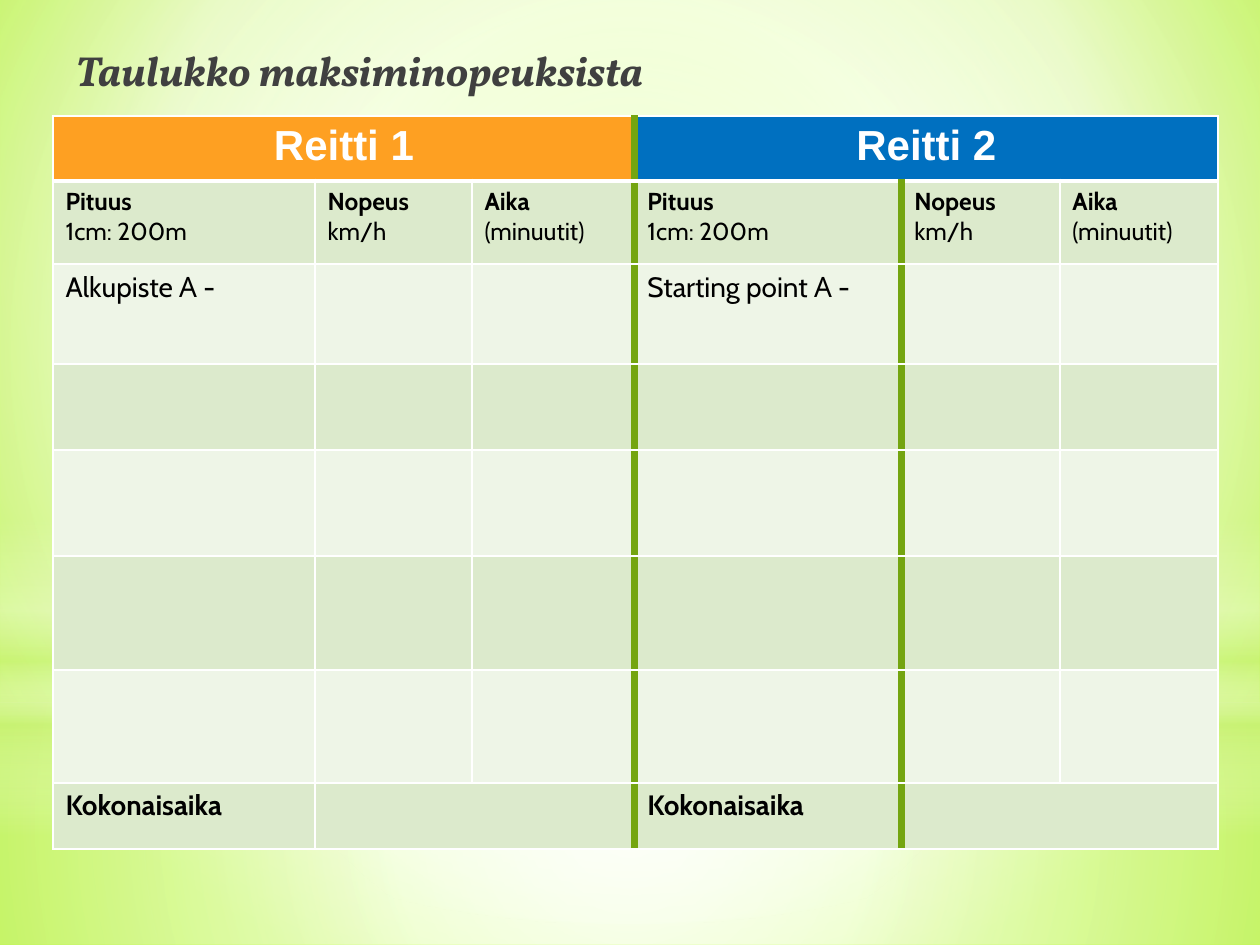
import pptx
import pptx.dml.color
import pptx.enum.shapes
import pptx.enum.text
import pptx.oxml
import pptx.oxml.ns
import pptx.util

PX = 914400 // 126
WHITE, LIME, GREEN = "FFFFFF", "CAF278", "74A510"
BANDS = ("DCEACC", "EEF5E7")
COLUMNS = (262, 157, 163, 267, 158, 158)
ROWS = (65, 83, 100, 86, 106, 114, 113, 66)
ROUTES = (("Reitti 1", "FEA022", "Alkupiste Α -"), ("Reitti 2", "0070C0", "Starting point Α -"))
HEADINGS = (("Pituus", "1cm: 200m"), ("Nopeus", "km/h"), ("Aika", "(minuutit)"))
CENTRE = (50, 50, 50, 50)
RECTANGLE = pptx.enum.shapes.MSO_SHAPE.RECTANGLE
OVAL = pptx.enum.shapes.MSO_SHAPE.OVAL
GLOWS = (
    (RECTANGLE, (0, 703, 1260, 242), ((0, WHITE, 91), (37, WHITE, 76), (100, LIME, 79)), CENTRE),
    (RECTANGLE, (0, 0, 1260, 703), ((0, WHITE, 89), (48, WHITE, 62), (100, LIME, 79)), CENTRE),
    (RECTANGLE, (0, 519, 1260, 315),
     ((0, WHITE, 0), (29, WHITE, 30), (45, LIME, 40), (55, WHITE, 26), (65, LIME, 60), (100, WHITE, 0)), None),
    (OVAL, (0, 221, 1260, 703), ((0, WHITE, 100), (56, WHITE, 0)), CENTRE),
)
BACKDROP = ((0, "CAFF60", 100), (60, "F7FFE7", 100), (100, "B7FF29", 100))


def px(length):
    """Turn px into EMU."""
    return pptx.util.Emu(length * PX)


def rgb(value):
    """Turn a hex string into a colour."""
    return pptx.dml.color.RGBColor.from_string(value)


def xml(markup):
    """Parse a DrawingML element whose root tag lacks its namespace."""
    tag, rest = markup.split(">", 1)
    return pptx.oxml.parse_xml(f"{tag} {pptx.oxml.ns.nsdecls('a')}>{rest}")


def paint_gradient(fill, owner, stops, focus):
    """Give a fill its stops, radiating from a focus or running downward."""
    fill.gradient()
    plain = owner.xpath(".//a:gradFill")[0]
    colours = "".join(
        f'<a:gs pos="{place * 1000}"><a:srgbClr val="{colour}"><a:alpha val="{opacity * 1000}"/></a:srgbClr></a:gs>'
        for place, colour, opacity in stops)
    direction = '<a:lin ang="5400000" scaled="0"/>'
    if focus:
        edges = " ".join(f'{side}="{share * 1000}"' for side, share in zip("ltrb", focus))
        direction = f'<a:path path="circle"><a:fillToRect {edges}/></a:path>'
    painted = xml(f"<a:gradFill><a:gsLst>{colours}</a:gsLst>{direction}</a:gradFill>")
    plain.getparent().replace(plain, painted)


def add_glow(slide, outline, box, stops, focus):
    """Add one translucent layer of the backdrop."""
    glow = slide.shapes.add_shape(outline, *map(px, box))
    glow.shadow.inherit = False
    glow.line.fill.background()
    paint_gradient(glow.fill, glow.element, stops, focus)


def write(paragraph, text, font, size, colour, **styles):
    """Write one formatted run in a paragraph."""
    run = paragraph.add_run()
    run.text = text
    formats = {"name": font, "size": pptx.util.Pt(size), "bold": False, **styles}
    for key, value in formats.items():
        setattr(run.font, key, value)
    run.font.color.rgb = rgb(colour)


def place_title(slide):
    """Place the heading above the backdrop layers."""
    title = slide.shapes.title
    for key, value in {"left": 63, "top": 38, "width": 1134, "height": 781}.items():
        setattr(title, key, px(value))
    frame = title.text_frame
    formats = {"vertical_anchor": pptx.enum.text.MSO_ANCHOR.TOP,
               "auto_size": pptx.enum.text.MSO_AUTO_SIZE.NONE, "word_wrap": True}
    for key, value in formats.items():
        setattr(frame, key, value)
    heading = frame.paragraphs[0]
    heading.alignment = pptx.enum.text.PP_ALIGN.LEFT
    heading.space_before, heading.space_after = pptx.util.Pt(4.8), pptx.util.Pt(3)
    write(heading, "Taulukko maksiminopeuksista", "Vollkorn", 24, "404040", bold=True, italic=True)
    title.element.getparent().append(title.element)


def style_cell(cell, row, column):
    """Fill a cell and rule its edges, with green lines between the parts."""
    cell.fill.solid()
    cell.fill.fore_color.rgb = rgb(BANDS[(row + 1) % 2] if row else ROUTES[column // 3][1])
    green_edges = {3} if row == 0 else {3, 4}
    edges = {
        "L": (GREEN, 4.5) if column in green_edges else (WHITE, 1),
        "R": (GREEN, 4.5) if column + 1 in green_edges else (WHITE, 1),
        "T": (WHITE, 3 if row == 1 else 1),
        "B": (WHITE, 3 if row == 0 else 1),
    }
    properties = cell._tc.get_or_add_tcPr()
    for index, (side, (colour, width)) in enumerate(edges.items()):
        properties.insert(index, xml(
            f'<a:ln{side} w="{int(width * 12700)}"><a:solidFill><a:srgbClr val="{colour}"/></a:solidFill></a:ln{side}>'))


def fill_route(table, start, name, first_leg):
    """Write one route's headings, first leg and total row."""
    table.cell(0, start).merge(table.cell(0, start + 2))
    table.cell(7, start + 1).merge(table.cell(7, start + 2))
    banner = table.cell(0, start).text_frame.paragraphs[0]
    banner.alignment = pptx.enum.text.PP_ALIGN.CENTER
    write(banner, name, "Arial", 24, WHITE, bold=True)
    for column, (quantity, unit) in enumerate(HEADINGS, start):
        frame = table.cell(1, column).text_frame
        write(frame.paragraphs[0], quantity, "Cabin", 14, "000000", bold=True)
        write(frame.add_paragraph(), unit, "Cabin", 14, "000000")
    for row, label, bold in ((2, first_leg, False), (7, "Kokonaisaika", True)):
        write(table.cell(row, start).text_frame.paragraphs[0], label, "Cabin", 16, "000000", bold=bold)


def add_speed_table(slide):
    """Add the table that compares the two routes."""
    table = slide.shapes.add_table(
        len(ROWS), len(COLUMNS), px(53), px(116), px(sum(COLUMNS)), px(sum(ROWS))).table
    for column, width in zip(table.columns, COLUMNS):
        column.width = px(width)
    for row, height in zip(table.rows, ROWS):
        row.height = px(height)
    for row in range(len(ROWS)):
        for column in range(len(COLUMNS)):
            style_cell(table.cell(row, column), row, column)
    for index, (name, _, first_leg) in enumerate(ROUTES):
        fill_route(table, index * 3, name, first_leg)


def main():
    """Build the slide and save it."""
    deck = pptx.Presentation()
    deck.slide_width, deck.slide_height = px(1260), px(945)
    slide = deck.slides.add_slide(deck.slide_layouts[5])
    paint_gradient(slide.background.fill, slide.element, BACKDROP, (20, 10, 20, 60))
    for glow in GLOWS:
        add_glow(slide, *glow)
    place_title(slide)
    add_speed_table(slide)
    deck.save("out.pptx")


if __name__ == "__main__":
    main()
